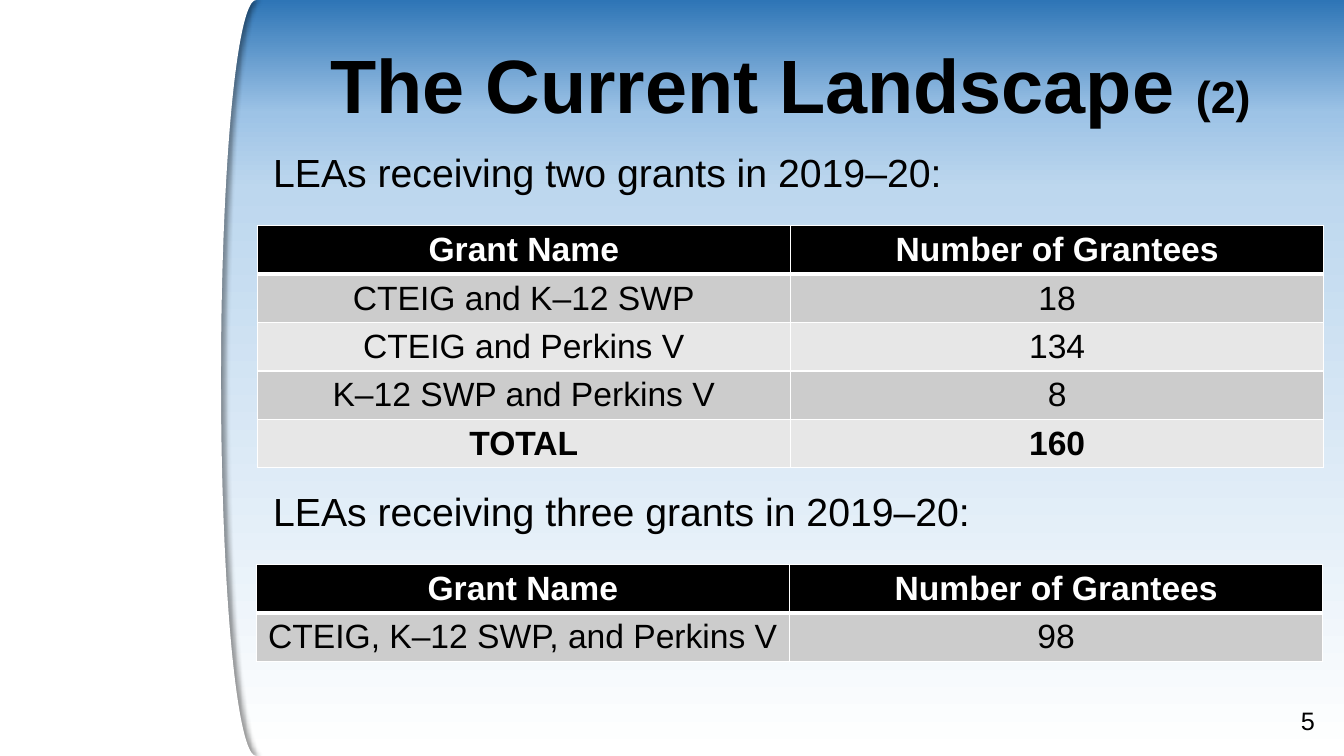
"""Build the slide on grantees that receive two or three grants."""
from copy import deepcopy

from lxml import etree
from pptx import Presentation
from pptx.dml.color import RGBColor
from pptx.enum.shapes import MSO_SHAPE
from pptx.enum.text import MSO_ANCHOR, PP_ALIGN
from pptx.oxml import parse_xml
from pptx.oxml.ns import nsdecls, qn
from pptx.util import Inches, Pt

CENTER, LEFT, RIGHT = PP_ALIGN.CENTER, PP_ALIGN.LEFT, PP_ALIGN.RIGHT
MIDDLE = MSO_ANCHOR.MIDDLE
STORED_DATA, RECTANGLE = MSO_SHAPE.FLOWCHART_STORED_DATA, MSO_SHAPE.RECTANGLE
BLACK, WHITE = "000000", "FFFFFF"
BAND_FILLS = ["CCCCCC", "E7E7E7"]
CONTENT_LEFT, CONTENT_WIDTH = Inches(2.55), Inches(10.58)
ROW_HEIGHT = Inches(0.47)


def color(hex_string):
    return RGBColor.from_string(hex_string)


def add_run(paragraph, text, size, hex_string=BLACK, bold=False, alignment=CENTER):
    paragraph.alignment = alignment
    run = paragraph.add_run()
    run.text = text
    run.font.name = "Arial"
    run.font.size = Pt(size)
    run.font.bold = bold
    run.font.color.rgb = color(hex_string)


presentation = Presentation()
presentation.slide_width, presentation.slide_height = Inches(13.33), Inches(7.5)
slide = presentation.slides.add_slide(presentation.slide_layouts[5])

background = slide.background.fill
background.gradient()
background.gradient_angle = 270
stop_list = slide.element.find(".//" + qn("a:gsLst"))
for extra in range(2):
    stop_list.append(deepcopy(stop_list[0]))
gradient = [(0, "2E75B6"), (0.15, "9DC3E6"), (0.25, "BDD7EE"), (1, WHITE)]
for stop, (position, hex_string) in zip(background.gradient_stops, gradient):
    stop.position = position
    stop.color.rgb = color(hex_string)

panels = []
for preset, left, width in [(STORED_DATA, 0.45, 2.09), (RECTANGLE, 0, 1.16)]:
    panel = slide.shapes.add_shape(
        preset, Inches(left), 0, Inches(width), presentation.slide_height)
    panel.fill.solid()
    panel.fill.fore_color.rgb = color(WHITE)
    panel.line.fill.background()
    panel.shadow.inherit = False
    panels.append(panel)
effects = panels[0].element.spPr.find(qn("a:effectLst"))
shadow = etree.SubElement(effects, qn("a:outerShdw"), blurRad=str(Pt(4)),
                          dist=str(Pt(3)), dir="0", algn="l", rotWithShape="0")
shade = etree.SubElement(shadow, qn("a:srgbClr"), val=BLACK)
etree.SubElement(shade, qn("a:alpha"), val="40000")

title = slide.shapes.title
title.left, title.top = CONTENT_LEFT, Inches(0.37)
title.width, title.height = CONTENT_WIDTH, Inches(1.02)
title.text_frame.vertical_anchor = MIDDLE
title.text_frame.word_wrap = True
paragraph = title.text_frame.paragraphs[0]
paragraph.line_spacing = 0.9
add_run(paragraph, "The Current Landscape ", 54, bold=True)
add_run(paragraph, "(2)", 32, bold=True)

labels = [
    ("LEAs receiving two grants in 2019–20:", 2.55, 1.48, 10.58, 0.66, 28, LEFT),
    ("LEAs receiving three grants in 2019–20:", 2.55, 4.84, 10.58, 0.66, 28, LEFT),
    ("5", 12.28, 6.95, 0.86, 0.4, 18, RIGHT),
]
for text, left, top, width, height, size, alignment in labels:
    box = slide.shapes.add_textbox(
        Inches(left), Inches(top), Inches(width), Inches(height))
    box.text_frame.word_wrap = True
    paragraph = box.text_frame.paragraphs[0]
    add_run(paragraph, text, size, alignment=alignment)
    if alignment == LEFT:
        paragraph.line_spacing = 0.9
        box.text_frame.margin_left = Inches(0.16)

header = ("Grant Name", "Number of Grantees")
tables = [
    (2.55, 2.24, [header, ("CTEIG and K–12 SWP", "18"), ("CTEIG and Perkins V", "134"),
                  ("K–12 SWP and Perkins V", "8"), ("TOTAL", "160")]),
    (2.54, 5.6, [header, ("CTEIG, K–12 SWP, and Perkins V", "98")]),
]
for left, top, rows in tables:
    table = slide.shapes.add_table(
        len(rows), len(header), Inches(left), Inches(top),
        CONTENT_WIDTH, ROW_HEIGHT * len(rows)).table
    for row_index, row in enumerate(rows):
        is_header = row_index == 0
        for column_index, text in enumerate(row):
            cell = table.cell(row_index, column_index)
            cell.vertical_anchor = MIDDLE
            cell.margin_top = cell.margin_bottom = Inches(0.04)
            properties = cell._tc.get_or_add_tcPr()
            border_widths = {"L": 1, "R": 1, "T": 3 if row_index == 1 else 1,
                             "B": 3 if is_header else 1}
            for side, width in border_widths.items():
                properties.append(parse_xml(
                    f'<a:ln{side} {nsdecls("a")} w="{Pt(width)}"><a:solidFill>'
                    f'<a:srgbClr val="{WHITE}"/></a:solidFill></a:ln{side}>'))
            cell.fill.solid()
            cell.fill.fore_color.rgb = color(
                BLACK if is_header else BAND_FILLS[(row_index - 1) % 2])
            add_run(cell.text_frame.paragraphs[0], text, 24,
                    WHITE if is_header else BLACK, is_header or row[0] == "TOTAL")

presentation.save("out.pptx")
